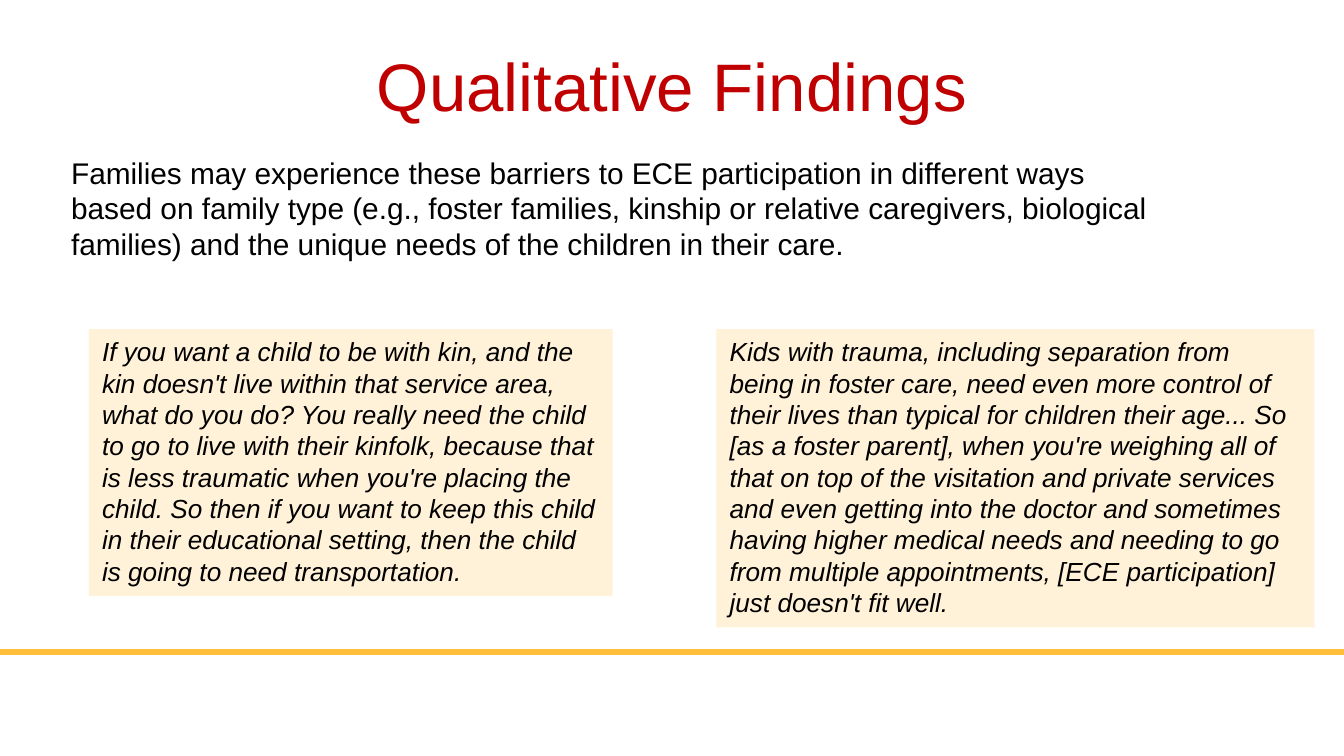
from pptx import Presentation
from pptx.dml.color import RGBColor
from pptx.enum.shapes import MSO_CONNECTOR as CONN, MSO_SHAPE as SHAPE
from pptx.enum.text import MSO_ANCHOR as ANCHOR, MSO_AUTO_SIZE as FIT, PP_ALIGN as ALIGN
from pptx.oxml.ns import qn
from pptx.util import Cm, Pt
from lxml.etree import SubElement

COLORS = {"title": "C00000", "text": "000000", "quote": "FFF2D8", "rule": "FFBF3B"}
FONT = "Arial"
WIDTH, HEIGHT = 25.4, 14.29
RULE_Y = 12.32
QUOTE_TOP = 6.22

TITLE = "Qualitative Findings"
BODY = (
    "Families may experience these barriers to ECE participation in different ways "
    "based on family type (e.g., foster families, kinship or relative caregivers, "
    "biological families) and the unique needs of the children in their care."
)
QUOTES = [
    (13.54, 11.3, 5.64,
     "Kids with trauma, including separation from being in foster care, need even more "
     "control of their lives than typical for children their age... So [as a foster "
     "parent], when you're weighing all of that on top of the visitation and private "
     "services and even getting into the doctor and sometimes having higher medical "
     "needs and needing to go from multiple appointments, [ECE participation] just "
     "doesn't fit well."),
    (1.68, 9.9, 5.05,
     "If you want a child to be with kin, and the kin doesn't live within that service "
     "area, what do you do? You really need the child to go to live with their kinfolk, "
     "because that is less traumatic when you're placing the child. So then if you want "
     "to keep this child in their educational setting, then the child is going to need "
     "transportation."),
]


def rgb(name):
    return RGBColor.from_string(COLORS[name])


def place(sp, left, top, width, height):
    sp.left, sp.top, sp.width, sp.height = Cm(left), Cm(top), Cm(width), Cm(height)


def write(sp, text, size, color="text", align=ALIGN.LEFT, italic=False, fit=FIT.NONE):
    tf = sp.text_frame
    tf.text = text
    tf.word_wrap = True
    tf.auto_size = fit
    tf.vertical_anchor = ANCHOR.TOP
    p = tf.paragraphs[0]
    p.alignment = align
    p.space_before = Pt(0)
    font = p.runs[0].font
    font.name, font.size, font.italic = FONT, Pt(size), italic
    font.color.rgb = rgb(color)
    return tf


prs = Presentation()
prs.slide_width, prs.slide_height = Cm(WIDTH), Cm(HEIGHT)
s = prs.slides.add_slide(prs.slide_layouts[1])

title, body = s.placeholders
place(title, 1.27, 0.58, 22.86, 2.39)
write(title, TITLE, 36, "title", ALIGN.CENTER).margin_top = Cm(0.25)

place(body, 1.09, 2.79, 21, 4.85)
pPr = write(body, BODY, 16).paragraphs[0]._p.get_or_add_pPr()
pPr.set("marL", "0")
pPr.set("indent", "0")
SubElement(pPr, qn("a:buNone"))

rule = s.shapes.add_connector(CONN.STRAIGHT, 0, Cm(RULE_Y), Cm(WIDTH), Cm(RULE_Y))
rule.line.color.rgb = rgb("rule")
rule.line.width = Pt(3)
SubElement(rule._element.spPr, qn("a:effectLst"))

for left, width, height, text in QUOTES:
    sp = s.shapes.add_shape(SHAPE.RECTANGLE, Cm(left), Cm(QUOTE_TOP), Cm(width), Cm(height))
    sp.shadow.inherit = False
    sp.fill.solid()
    sp.fill.fore_color.rgb = rgb("quote")
    sp.line.fill.background()
    write(sp, text, 14, italic=True, fit=FIT.SHAPE_TO_FIT_TEXT)

prs.save("out.pptx")
